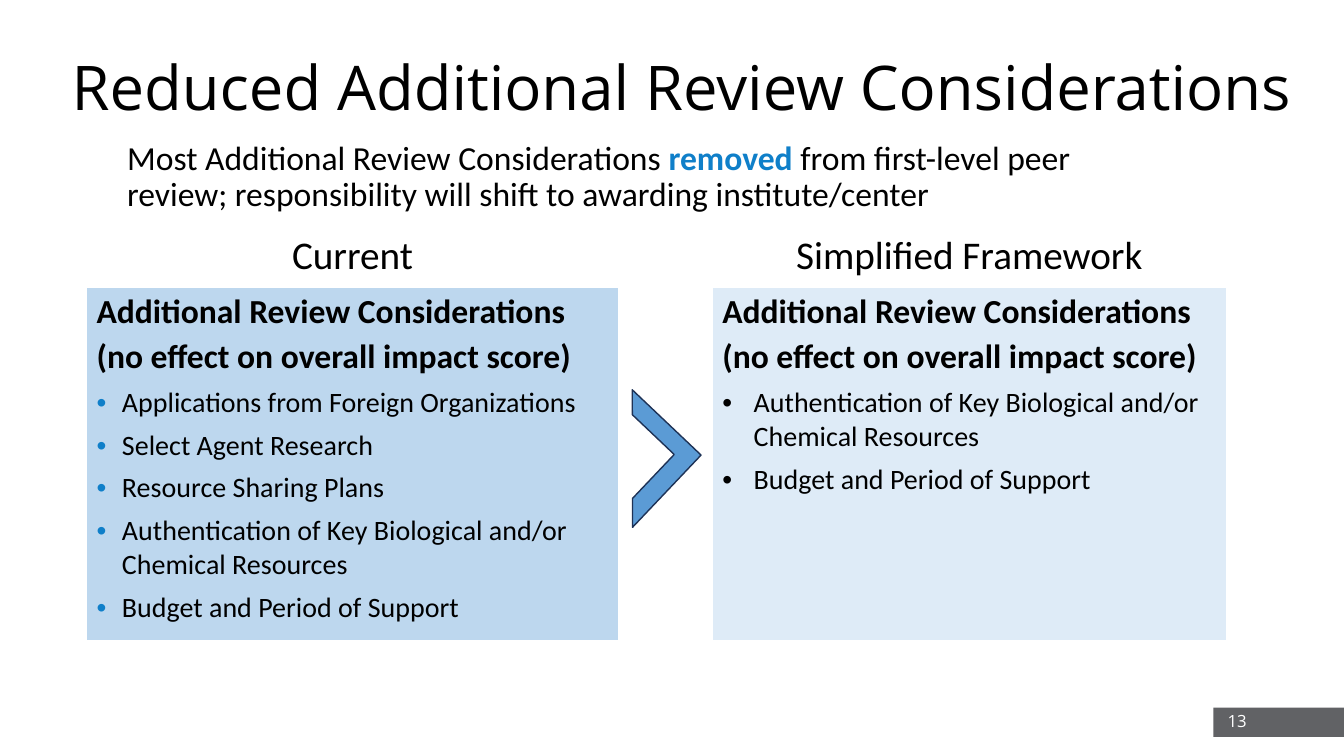
from lxml.etree import SubElement
from pptx import Presentation
from pptx.dml.color import RGBColor
from pptx.enum.shapes import MSO_SHAPE
from pptx.enum.text import MSO_ANCHOR, MSO_AUTO_SIZE, PP_ALIGN
from pptx.oxml.ns import qn
from pptx.util import Cm, Pt

COLORS = {"black": "000000", "white": "FFFFFF", "accent": "0F7FC9", "footer": "616265",
          "current": "BDD7EE", "simplified": "DEEBF7", "arrow": "5B9BD5", "arrow_line": "1E3256"}


def add_run(p, text, size, color="black", bold=False, font="Calibri"):
    r = p.add_run()
    r.text = text
    r.font.name, r.font.size, r.font.bold = font, Pt(size), bold
    r.font.color.rgb = RGBColor.from_string(COLORS[color])


def set_bullet(p, indent, color):
    pPr = p._p.get_or_add_pPr()
    pPr.set("marL", str(Cm(indent)))
    pPr.set("indent", str(-Cm(indent)))
    clr = SubElement(pPr, qn("a:buClr"))
    SubElement(clr, qn("a:srgbClr"), val=COLORS[color])
    SubElement(pPr, qn("a:buFont"), typeface="Arial")
    SubElement(pPr, qn("a:buChar"), char="•")


prs = Presentation()
prs.slide_width, prs.slide_height = Cm(33.87), Cm(19.05)
s = prs.slides.add_slide(prs.slide_layouts[1])

# Page number on its grey bar
bar = s.shapes.add_shape(MSO_SHAPE.RECTANGLE, Cm(30.58), Cm(17.83), Cm(3.29), Cm(0.74))
bar.shadow.inherit = False
bar.fill.solid()
bar.fill.fore_color.rgb = RGBColor.from_string(COLORS["footer"])
bar.line.fill.background()
tf = s.shapes.add_textbox(Cm(24.05), Cm(17.65), Cm(7.62), Cm(1.02)).text_frame
tf.word_wrap = True
tf.vertical_anchor = MSO_ANCHOR.MIDDLE
p = tf.paragraphs[0]
p.alignment = PP_ALIGN.RIGHT
add_run(p, "13", 12, "white", font="Open Sans")

# Title and lead sentence
title, body = s.shapes.title, s.placeholders[1]
title.left, title.top, title.width, title.height = Cm(1.55), Cm(0.43), Cm(31.47), Cm(3.68)
body.left, body.top, body.width, body.height = Cm(2.95), Cm(3.43), Cm(26.82), Cm(2.49)
for sp, anchor in ((title, MSO_ANCHOR.MIDDLE), (body, MSO_ANCHOR.TOP)):
    tf = sp.text_frame
    tf.auto_size = MSO_AUTO_SIZE.NONE
    tf.word_wrap = True
    tf.vertical_anchor = anchor
    p = tf.paragraphs[0]
    p.alignment = PP_ALIGN.LEFT
    p.line_spacing = 0.9
    p.space_before = Pt(0)
add_run(title.text_frame.paragraphs[0], "Reduced Additional Review Considerations", 44,
        font="Open Sans")
p = body.text_frame.paragraphs[0]
pPr = p._p.get_or_add_pPr()
pPr.set("marL", "0")
pPr.set("indent", "0")
SubElement(pPr, qn("a:buNone"))
add_run(p, "Most Additional Review Considerations ", 24)
add_run(p, "removed", 24, "accent", bold=True)
add_run(p, " from first-level peer review; responsibility will shift to awarding institute/center", 24)

# Comparison table: the middle column is the gap for the arrow
HEADING = ["Additional Review Considerations", "(no effect on overall impact score)"]
KEPT = ["Authentication of Key Biological and/or Chemical Resources", "Budget and Period of Support"]
REMOVED = ["Applications from Foreign Organizations", "Select Agent Research",
           "Resource Sharing Plans"]
# column, header, fill, items, bullet indent, bullet colour
SIDES = [(0, "Current", "current", REMOVED + KEPT, 0.64, "accent"),
         (2, "Simplified Framework", "simplified", KEPT, 0.79, "black")]

table = s.shapes.add_table(2, 3, Cm(2.18), Cm(5.72), Cm(28.72), Cm(10.41)).table
table.first_row = table.horz_banding = False
for col, width in zip(table.columns, (13.41, 2.36, 12.95)):
    col.width = Cm(width)
for row, height in zip(table.rows, (1.49, 8.92)):
    row.height = Cm(height)

fills = {(1, side[0]): side[2] for side in SIDES}
for i in range(2):
    for j in range(3):
        cell = table.cell(i, j)
        tcPr = cell._tc.get_or_add_tcPr()
        for edge in ("lnL", "lnR", "lnT", "lnB"):
            thick = (i, edge) in ((0, "lnB"), (1, "lnT"))
            ln = SubElement(tcPr, qn("a:" + edge), w=str(Pt(3 if thick else 1)))
            SubElement(SubElement(ln, qn("a:solidFill")), qn("a:srgbClr"), val=COLORS["white"])
        cell.fill.solid()
        cell.fill.fore_color.rgb = RGBColor.from_string(COLORS[fills.get((i, j), "white")])

for j, header, fill, items, indent, bullet_color in SIDES:
    p = table.cell(0, j).text_frame.paragraphs[0]
    p.alignment = PP_ALIGN.CENTER
    add_run(p, header, 28)
    tf = table.cell(1, j).text_frame
    for n, line in enumerate(HEADING):
        p = tf.add_paragraph() if n else tf.paragraphs[0]
        p.space_before = Pt(3 if n else 0)
        add_run(p, line, 24, bold=True)
    for item in items:
        p = tf.add_paragraph()
        set_bullet(p, indent, bullet_color)
        p.space_before = Pt(6)
        add_run(p, item, 20)

# Arrow between the two sides
arrow = s.shapes.add_shape(MSO_SHAPE.HALF_FRAME, Cm(14.68), Cm(10.36), Cm(2.51), Cm(2.39))
arrow.shadow.inherit = False
arrow.rotation = 133.5
arrow.adjustments[0], arrow.adjustments[1] = 0.21, 0.19
arrow.fill.solid()
arrow.fill.fore_color.rgb = RGBColor.from_string(COLORS["arrow"])
arrow.line.color.rgb = RGBColor.from_string(COLORS["arrow_line"])
arrow.line.width = Pt(1)

prs.save("out.pptx")
